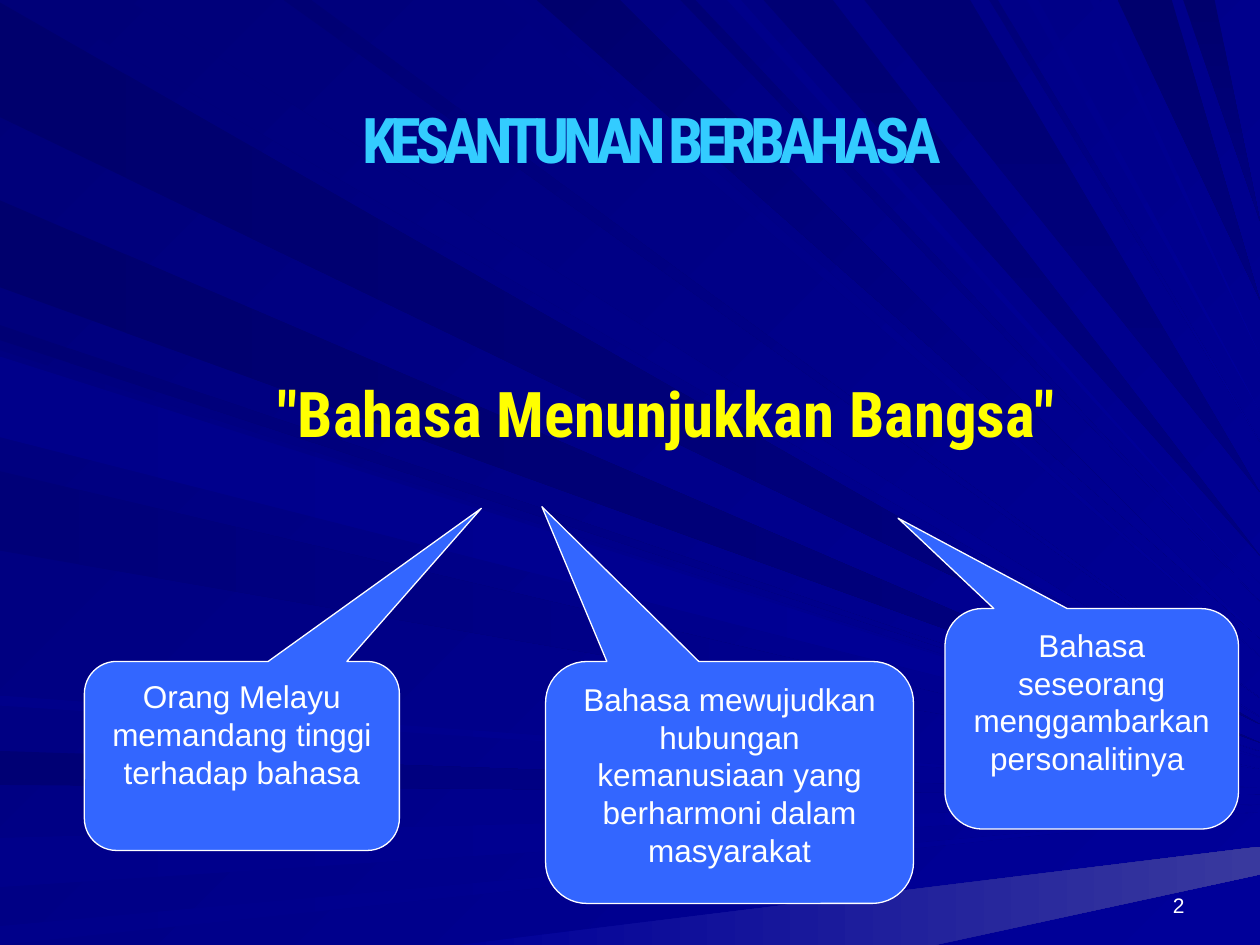
import math
from dataclasses import dataclass
from typing import NamedTuple

import pptx
import pptx.dml.color
import pptx.enum.shapes
import pptx.enum.text
import pptx.util
from lxml import etree
from pptx.oxml.ns import qn
from pptx.util import Inches

ALIGN = pptx.enum.text.PP_ALIGN
ANCHOR = pptx.enum.text.MSO_ANCHOR
WIDE, HIGH = 10, 7.5
HUB = 5.7


@dataclass(frozen=True)
class Theme:
    back: str = "000078"
    dark: str = "00006D"
    deep: str = "000074"
    mid: str = "000080"
    soft: str = "00008A"
    glow: str = "000099"
    dusk: str = "39399E"
    white: str = "FFFFFF"
    sky: str = "33CCFF"
    yellow: str = "FFFF00"
    rust: str = "993300"
    panel: str = "3366FF"
    body: str = "Arial"
    head: str = "Roboto Condensed"
    big: int = 36
    note: int = 18
    small: int = 12


T = Theme()


class Ray(NamedTuple):
    """A beam from one slide edge: its span there and its two shades."""
    near: float
    far: float
    start: str
    end: str = T.glow


class Banner(NamedTuple):
    text: str
    box: tuple[float, ...]
    color: str
    edge: str
    width: float
    track: int


class Callout(NamedTuple):
    text: str
    box: tuple[float, ...]
    tip: tuple[float, float]


LEFT = [
    Ray(0.02, 0.93, T.dark, T.mid),
    Ray(5.96, 6.23, T.deep),
    Ray(6.65, 7.04, T.soft),
    Ray(7.35, 7.5, T.soft),
    Ray(2.58, 2.7, T.deep),
    Ray(1.59, 2.28, T.dark, T.mid),
    Ray(2.78, 3.42, T.mid),
    Ray(3.74, 4.37, T.back),
    Ray(5.52, 5.6, T.soft),
    Ray(2.83, 3.47, T.soft),
]

TOP = [
    Ray(0.26, 1.01, T.back),
    Ray(3.98, 4.16, T.mid),
    Ray(4.26, 4.92, T.dark),
    Ray(5.4, 5.52, T.deep),
    Ray(6.06, 6.61, T.deep, T.mid),
    Ray(8.87, 9.3, T.dark, T.mid),
    Ray(9.39, 9.64, T.dark, T.mid),
    Ray(2.25, 2.47, T.deep),
    Ray(5.77, 5.88, T.soft),
    Ray(6.86, 7.7, T.deep, T.mid),
    Ray(7.85, 7.92, T.back),
    Ray(8.15, 8.24, T.soft),
    Ray(8.65, 8.72, T.soft),
]

BANNERS = [
    Banner("KESANTUNAN BERBAHASA", (0.67, 0.75, 9, 1.58), T.sky, T.mid, 1, -360),
    Banner('"Bahasa Menunjukkan Bangsa"', (1.25, 2.92, 8.08, 0.99), T.yellow, T.rust, 0.75, 0),
]

CALLOUTS = [
    Callout("Orang Melayu memandang tinggi terhadap bahasa",
            (0.67, 5.25, 2.5, 1.5), (0.76, -1.31)),
    Callout("Bahasa mewujudkan hubungan kemanusiaan yang berharmoni dalam masyarakat",
            (4.33, 5.25, 2.92, 1.92), (-0.51, -1.14)),
    Callout("Bahasa seseorang menggambarkan personalitinya ",
            (7.5, 4.83, 2.33, 1.75), (-0.66, -0.91)),
]


def rgb(value: str) -> pptx.dml.color.RGBColor:
    return pptx.dml.color.RGBColor.from_string(value)


def shade(fill, start: str, end: str, angle: int) -> None:
    """Fill with a clockwise gradient."""
    fill.gradient()
    fill.gradient_angle = -angle % 360
    for stop, value in zip(fill.gradient_stops, (start, end)):
        stop.color.rgb = rgb(value)


def write(shape, text: str, size: int, color: str, face: str = T.body,
          align=ALIGN.CENTER, anchor=ANCHOR.TOP, wrap: bool = True):
    frame = shape.text_frame
    frame.word_wrap = wrap
    frame.vertical_anchor = anchor
    para = frame.paragraphs[0]
    para.text = text
    para.alignment = align
    para.font.size = pptx.util.Pt(size)
    para.font.name = face
    para.font.color.rgb = rgb(color)
    return para


def draw_facet(slide, dots: list[tuple[float, float]], ray: Ray, angle: int) -> None:
    ends = [(Inches(x), Inches(y)) for x, y in dots]
    pen = slide.shapes.build_freeform(*ends[0])
    pen.add_line_segments(ends[1:], close=True)
    shape = pen.convert_to_shape()
    shape.shadow.inherit = False
    shape.line.fill.background()
    shade(shape.fill, ray.start, ray.end, angle)


def draw_left(slide, ray: Ray) -> None:
    """Taper a beam from the left edge to the right one."""
    tip = HUB + (ray.near + ray.far) / 20
    draw_facet(slide, [(0, ray.near), (WIDE, tip), (0, ray.far)], ray, 0)


def draw_top(slide, ray: Ray) -> None:
    """Taper a beam from the top edge; tips rise along a quarter ellipse."""
    part = (ray.near + ray.far) / 2 / WIDE
    tip = HUB * math.sqrt(1 - part ** 2)
    angle = 90 if ray.end == T.mid else 45
    draw_facet(slide, [(ray.near, 0), (WIDE, tip), (ray.far, 0)], ray, angle)


def draw_banner(slide, item: Banner) -> None:
    box = slide.shapes.add_textbox(*map(Inches, item.box))
    para = write(box, item.text, T.big, item.color, T.head, wrap=False)
    para.font.bold = True
    run = para.runs[0]
    run.font.color.rgb = rgb(item.color)
    props = run.font._element
    props.set("spc", str(item.track))
    line = etree.Element(qn("a:ln"), w=str(pptx.util.Pt(item.width)))
    fill = etree.SubElement(line, qn("a:solidFill"))
    etree.SubElement(fill, qn("a:srgbClr"), val=item.edge)
    props.insert(0, line)


def draw_callout(slide, item: Callout) -> None:
    kind = pptx.enum.shapes.MSO_SHAPE.ROUNDED_RECTANGULAR_CALLOUT
    shape = slide.shapes.add_shape(kind, *map(Inches, item.box))
    shape.shadow.inherit = False
    for index, value in enumerate((*item.tip, 0.17)):
        shape.adjustments[index] = value
    shape.fill.solid()
    shape.fill.fore_color.rgb = rgb(T.panel)
    shape.line.color.rgb = rgb(T.white)
    shape.line.width = pptx.util.Pt(0.75)
    write(shape, item.text, T.note, T.white)


def main() -> None:
    deck = pptx.Presentation()
    deck.slide_width, deck.slide_height = Inches(WIDE), Inches(HIGH)
    slide = deck.slides.add_slide(deck.slide_layouts[6])
    shade(slide.background.fill, T.back, T.glow, 45)
    for ray in LEFT:
        draw_left(slide, ray)
    base = Ray(3.64, 7.42, T.glow, T.dusk)
    draw_facet(slide, [(base.near, HIGH), (WIDE, 6.72), (WIDE, 6.94), (base.far, HIGH)], base, 0)
    for ray in TOP:
        draw_top(slide, ray)
    page = slide.shapes.add_textbox(*map(Inches, (7.17, 6.83, 2.33, 0.5)))
    write(page, "2", T.small, T.white, align=ALIGN.RIGHT, anchor=ANCHOR.BOTTOM)
    for item in BANNERS:
        draw_banner(slide, item)
    for item in CALLOUTS:
        draw_callout(slide, item)
    deck.save("out.pptx")


if __name__ == "__main__":
    main()
